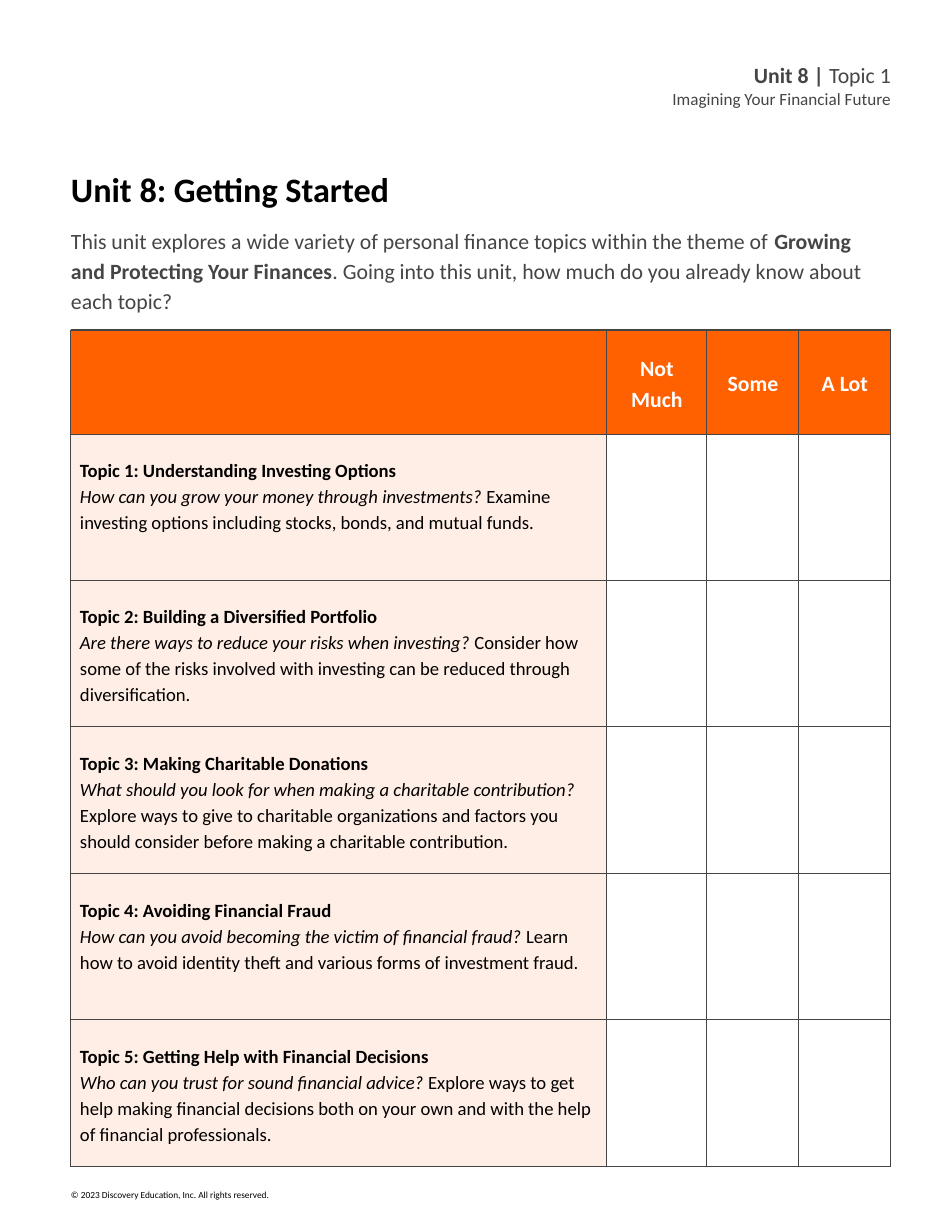
"""Build the Unit 8 getting-started self-assessment page."""
from lxml import etree
from pptx import Presentation
from pptx.dml.color import RGBColor
from pptx.enum.text import MSO_ANCHOR, PP_ALIGN
from pptx.oxml.ns import qn
from pptx.util import Emu, Pt

LEFT, RIGHT, CENTER, JUSTIFY = PP_ALIGN.LEFT, PP_ALIGN.RIGHT, PP_ALIGN.CENTER, PP_ALIGN.JUSTIFY
TOP, MIDDLE = MSO_ANCHOR.TOP, MSO_ANCHOR.MIDDLE
ORANGE = RGBColor(0xFF, 0x60, 0x00)
GRAY = RGBColor(0x45, 0x45, 0x45)
BLACK = RGBColor(0x00, 0x00, 0x00)
WHITE = RGBColor(0xFF, 0xFF, 0xFF)
FONT = "Calibri"
EMU_PER_INCH, PX_PER_INCH = 914400, 112
MARGIN = 71
LINE_SPACING = 1.15

LEVELS = ["Not Much", "Some", "A Lot"]
TOPICS = [
    ("Topic 1: Understanding Investing Options",
     "How can you grow your money through investments? ",
     "Examine investing options including stocks, bonds, and mutual funds."),
    ("Topic 2: Building a Diversified Portfolio",
     "Are there ways to reduce your risks when investing? ",
     "Consider how some of the risks involved with investing can be reduced through diversification."),
    ("Topic 3: Making Charitable Donations",
     "What should you look for when making a charitable contribution? ",
     "Explore ways to give to charitable organizations and factors you should consider "
     "before making a charitable contribution."),
    ("Topic 4: Avoiding Financial Fraud",
     "How can you avoid becoming the victim of financial fraud? ",
     "Learn how to avoid identity theft and various forms of investment fraud."),
    ("Topic 5: Getting Help with Financial Decisions",
     "Who can you trust for sound financial advice? ",
     "Explore ways to get help making financial decisions both on your own "
     "and with the help of financial professionals."),
]


def px(length):
    return Emu(round(length * EMU_PER_INCH / PX_PER_INCH))


def run(paragraph, text, size=12, color=BLACK, bold=False, italic=False):
    font_run = paragraph.add_run()
    font_run.text = text
    font = font_run.font
    font.name, font.size, font.bold, font.italic = FONT, Pt(size), bold, italic
    font.color.rgb = color


class Page:
    def __init__(self, slide):
        self.slide = slide

    def paragraph(self, frame, runs, align=LEFT, spacing=LINE_SPACING, first=True):
        paragraph = frame.paragraphs[0] if first else frame.add_paragraph()
        paragraph.alignment, paragraph.line_spacing = align, spacing
        for text, style in runs:
            run(paragraph, text, **style)

    def text(self, left, top, width, height, paragraphs, align=LEFT, anchor=TOP, spacing=LINE_SPACING):
        frame = self.slide.shapes.add_textbox(px(left), px(top), px(width), px(height)).text_frame
        frame.word_wrap, frame.vertical_anchor = True, anchor
        frame.margin_left = frame.margin_right = frame.margin_top = frame.margin_bottom = 0
        for index, runs in enumerate(paragraphs):
            self.paragraph(frame, runs, align, spacing, index == 0)

    def table(self, left, top, widths, heights):
        table = self.slide.shapes.add_table(
            len(heights), len(widths), px(left), px(top), px(sum(widths)), px(sum(heights))).table
        table.first_row = table.horz_banding = False
        for column, width in zip(table.columns, widths):
            column.width = px(width)
        for row, height in zip(table.rows, heights):
            row.height = px(height)
        for cell in table.iter_cells():
            cell.margin_left = cell.margin_right = px(9)
            cell.margin_top = cell.margin_bottom = px(22)
            self.borders(cell)
            cell.fill.background()
        return table

    def borders(self, cell):
        properties = cell._tc.get_or_add_tcPr()
        for side in ("a:lnL", "a:lnR", "a:lnT", "a:lnB"):
            line = etree.SubElement(properties, qn(side), w=str(Pt(0.75)))
            fill = etree.SubElement(line, qn("a:solidFill"))
            etree.SubElement(fill, qn("a:srgbClr"), val=str(GRAY))

    def fill(self, cell, color, opacity=100):
        cell.fill.solid()
        cell.fill.fore_color.rgb = color
        if opacity < 100:
            color_element = cell._tc.tcPr.find(qn("a:solidFill"))[0]
            etree.SubElement(color_element, qn("a:alpha"), val=str(opacity * 1000))


def main():
    presentation = Presentation()
    presentation.slide_width, presentation.slide_height = px(952), px(1232)
    page = Page(presentation.slides.add_slide(presentation.slide_layouts[6]))

    heading = {"size": 14, "color": GRAY}
    strong = {**heading, "bold": True}
    page.text(440, 62, 451, 47, [
        [("Unit 8 | ", strong), ("Topic 1", heading)],
        [("Imagining Your Financial Future", {"size": 11, "color": GRAY})],
    ], align=RIGHT, anchor=MIDDLE, spacing=1)
    page.text(MARGIN, 168, 812, 40,
              [[("Unit 8: Getting Started", {"size": 22, "bold": True})]], spacing=1)
    page.text(MARGIN, 224, 812, 91, [[
        ("This unit explores a wide variety of personal finance topics within the theme of ", heading),
        ("Growing and Protecting Your Finances", strong),
        (". Going into this unit, how much do you already know about each topic?", heading),
    ]])

    table = page.table(MARGIN, 330, [536, 100, 92, 92], [104] + [146] * len(TOPICS))
    for column, label in enumerate([""] + LEVELS):
        cell = table.cell(0, column)
        page.fill(cell, ORANGE)
        cell.vertical_anchor = MIDDLE
        if label:
            page.paragraph(cell.text_frame, [(label, {**strong, "color": WHITE})], CENTER)
    for row, (title, question, description) in enumerate(TOPICS, start=1):
        cell = table.cell(row, 0)
        page.fill(cell, ORANGE, opacity=10)
        page.paragraph(cell.text_frame, [(title, {"bold": True})])
        page.paragraph(cell.text_frame, [(question, {"italic": True}), (description, {})], first=False)

    page.text(MARGIN, 1187, 381, 11,
              [[("© 2023 Discovery Education, Inc. All rights reserved.", {"size": 6})]], align=JUSTIFY)
    presentation.save("out.pptx")


if __name__ == "__main__":
    main()
